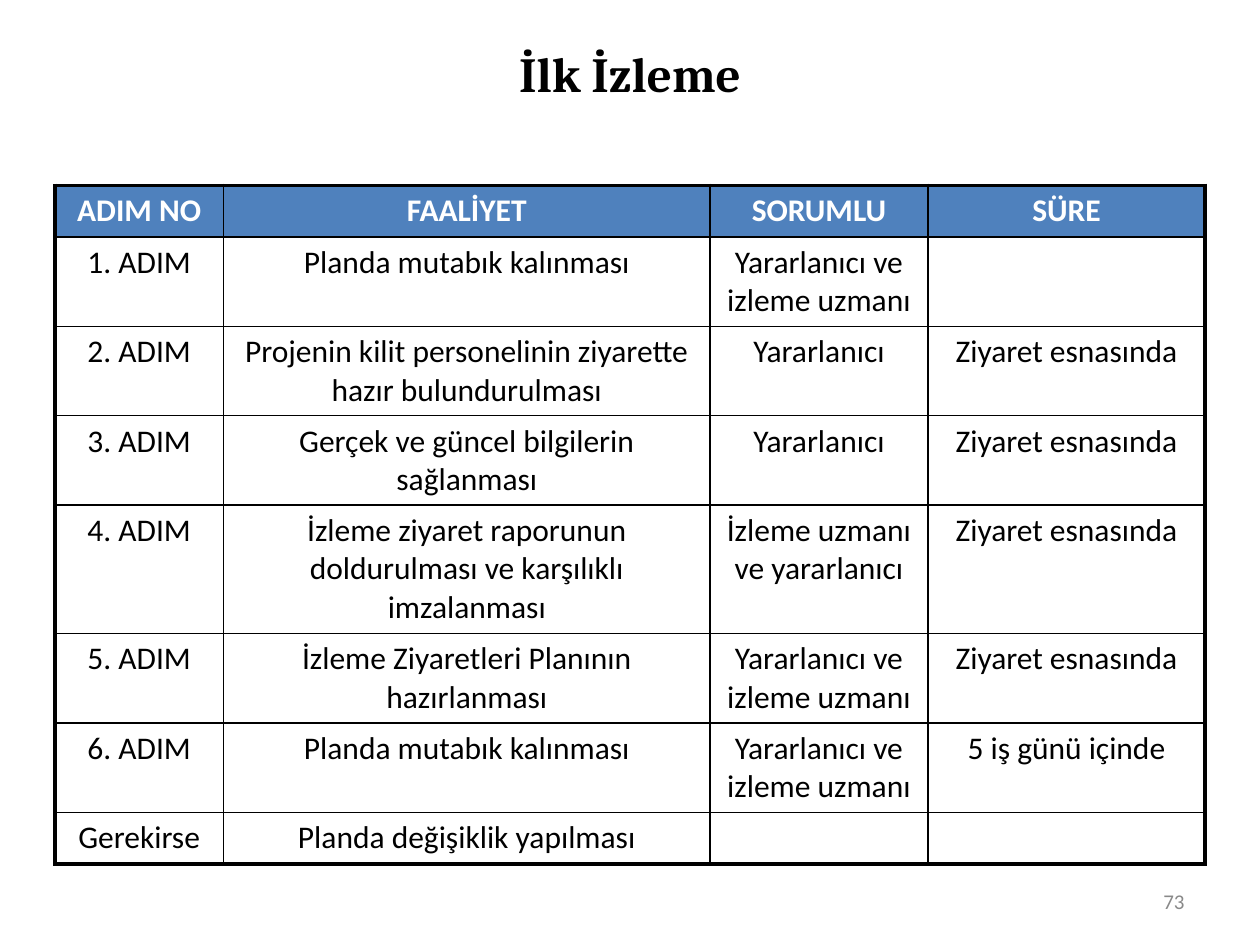
from lxml.etree import SubElement
from pptx import Presentation
from pptx.dml.color import RGBColor
from pptx.enum.text import MSO_ANCHOR as Anchor, PP_ALIGN as Align
from pptx.oxml.ns import qn
from pptx.util import Inches, Pt

COLORS = {"ink": "000000", "header": "4F81BD", "header_text": "FFFFFF", "number": "898989"}
WIDTH, HEIGHT = 10, 7.5
COLUMNS = [1.34, 3.86, 1.73, 2.2]
ROW_HEIGHTS = {1: 0.41, 2: 0.71, 3: 1.02}  # by number of text lines
INNER_LINE, OUTER_LINE = 1, 2.25

HEADINGS = ["ADIM NO", "FAALİYET", "SORUMLU", "SÜRE"]
BOTH = "Yararlanıcı ve izleme uzmanı"
VISIT = "Ziyaret esnasında"
STEPS = [  # text lines, then the cells
    (2, ["1. ADIM", "Planda mutabık kalınması", BOTH, ""]),
    (2, ["2. ADIM", "Projenin kilit personelinin ziyarette hazır bulundurulması",
         "Yararlanıcı", VISIT]),
    (2, ["3. ADIM", "Gerçek ve güncel bilgilerin sağlanması", "Yararlanıcı", VISIT]),
    (3, ["4. ADIM", "İzleme ziyaret raporunun doldurulması ve karşılıklı imzalanması",
         "İzleme uzmanı ve yararlanıcı", VISIT]),
    (2, ["5. ADIM", "İzleme Ziyaretleri Planının hazırlanması", BOTH, VISIT]),
    (2, ["6. ADIM", "Planda mutabık kalınması", BOTH, "5 iş günü içinde"]),
    (1, ["Gerekirse", "Planda değişiklik yapılması", "", ""]),
]


def write(frame, text, size, color, align, font="Calibri", bold=False):
    para = frame.paragraphs[0]
    para.alignment = align
    para.font.size = Pt(size)
    if text:
        span = para.add_run()
        span.text = text
        span.font.name = font
        span.font.size = Pt(size)
        span.font.bold = bold
        span.font.color.rgb = RGBColor.from_string(COLORS[color])


def add_text(page, box, text, size, color, align, anchor, **style):
    frame = page.shapes.add_textbox(*map(Inches, box)).text_frame
    frame.word_wrap = True
    frame.vertical_anchor = anchor
    write(frame, text, size, color, align, **style)


def set_borders(cell, widths):
    """Draw the cell's borders; widths are points for left, right, top, bottom."""
    properties = cell._tc.get_or_add_tcPr()
    for side, width in zip("LRTB", widths):
        line = SubElement(properties, qn(f"a:ln{side}"), w=str(Pt(width)))
        fill = SubElement(line, qn("a:solidFill"))
        SubElement(fill, qn("a:srgbClr"), val=COLORS["ink"])


def add_steps_table(page, left, top):
    rows = [(1, HEADINGS)] + STEPS
    heights = [ROW_HEIGHTS[lines] for lines, _ in rows]
    box = map(Inches, (left, top, sum(COLUMNS), sum(heights)))
    table = page.shapes.add_table(len(rows), len(COLUMNS), *box).table
    for column, width in zip(table.columns, COLUMNS):
        column.width = Inches(width)
    last_row, last_col = len(rows) - 1, len(COLUMNS) - 1
    for r, (_, texts) in enumerate(rows):
        table.rows[r].height = Inches(heights[r])
        header = r == 0
        for c, text in enumerate(texts):
            cell = table.cell(r, c)
            on_edge = (c == 0, c == last_col, r == 0, r == last_row)
            set_borders(cell, [OUTER_LINE if edge else INNER_LINE for edge in on_edge])
            if header:
                cell.fill.solid()
                cell.fill.fore_color.rgb = RGBColor.from_string(COLORS["header"])
            else:
                cell.fill.background()
            write(cell.text_frame, text, 18, "header_text" if header else "ink",
                  Align.CENTER, bold=header)


def build_table_slide(deck):
    page = deck.slides.add_slide(deck.slide_layouts[6])
    margin = 0.05 * WIDTH
    inner = WIDTH - 2 * margin
    add_text(page, (margin, 0.04 * HEIGHT, inner, 0.93), "İlk İzleme", 28, "ink",
             Align.CENTER, Anchor.TOP, font="Cambria", bold=True)
    add_steps_table(page, (WIDTH - sum(COLUMNS)) / 2, 1.47)
    number_width = 2.33
    add_text(page, (WIDTH - margin - number_width, 6.95, number_width, 0.4), "73", 12,
             "number", Align.RIGHT, Anchor.MIDDLE)


def main():
    deck = Presentation()
    deck.slide_width, deck.slide_height = Inches(WIDTH), Inches(HEIGHT)
    build_table_slide(deck)
    deck.save("out.pptx")


if __name__ == "__main__":
    main()
